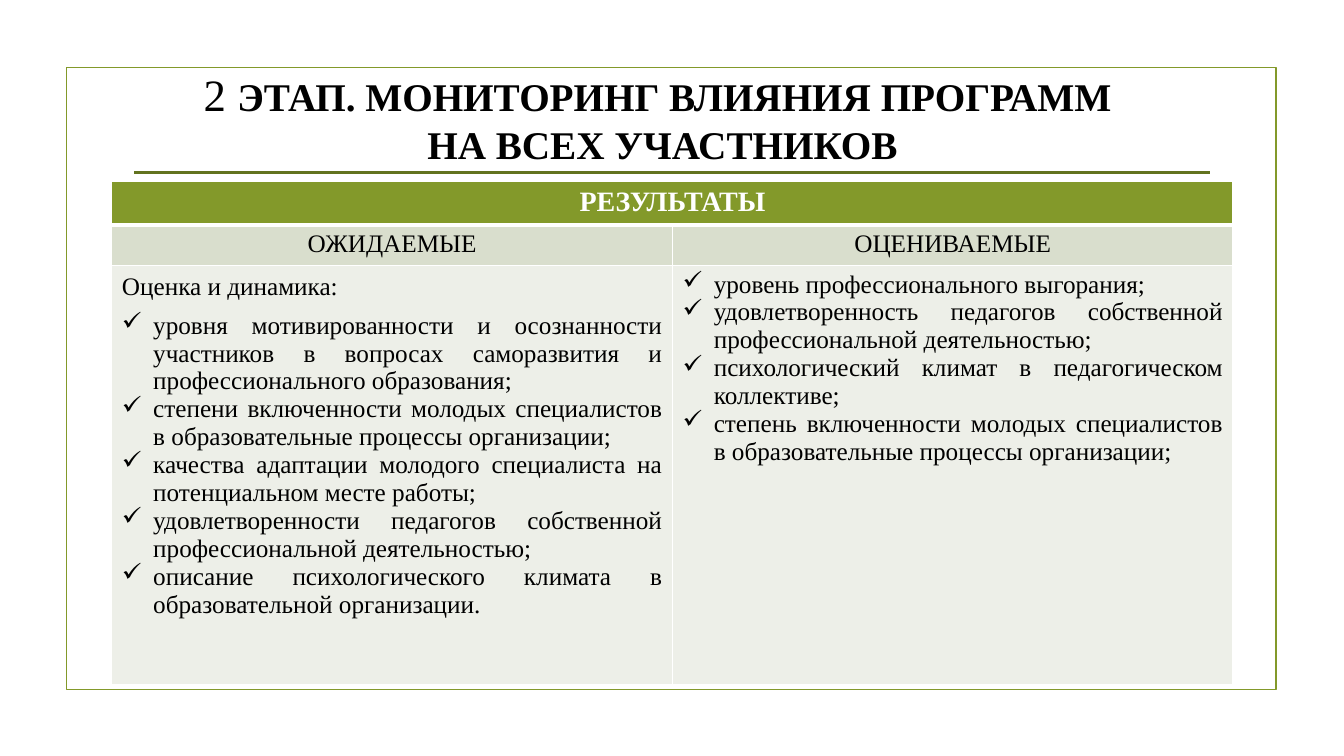
from lxml import etree
from pptx import Presentation
from pptx.dml.color import RGBColor
from pptx.enum.shapes import MSO_CONNECTOR, MSO_SHAPE
from pptx.enum.text import MSO_ANCHOR, PP_ALIGN
from pptx.oxml.ns import qn
from pptx.util import Emu, Pt

PX = 9144  # 100 px to the inch
FONT = "Times New Roman"
CENTER, JUSTIFY = PP_ALIGN.CENTER, PP_ALIGN.JUSTIFY
BOTTOM = MSO_ANCHOR.BOTTOM
RECTANGLE, STRAIGHT = MSO_SHAPE.RECTANGLE, MSO_CONNECTOR.STRAIGHT

GREEN, DARK_GREEN = "83992A", "62731F"
SUBHEADER_FILL, BODY_FILL = "D9DECD", "EDEFE8"
BLACK, WHITE = "000000", "FFFFFF"
BULLET_INDENT = 31

INTRO = "Оценка и динамика:"
EXPECTED = [
    "уровня мотивированности и осознанности участников в вопросах саморазвития и профессионального образования;",
    "степени включенности молодых специалистов в образовательные процессы организации; ",
    "качества адаптации молодого специалиста на потенциальном месте работы;",
    "удовлетворенности педагогов собственной профессиональной деятельностью;",
    "описание психологического климата в образовательной организации. ",
]
ASSESSED = [
    "уровень профессионального выгорания;",
    "удовлетворенность педагогов собственной профессиональной деятельностью;",
    "психологический климат в педагогическом коллективе; ",
    "степень включенности молодых специалистов в образовательные процессы организации; ",
]


def px(*lengths):
    return [Emu(length * PX) for length in lengths]


def color(value):
    return RGBColor.from_string(value)


def add_run(paragraph, text, size, bold=False, text_color=BLACK):
    run = paragraph.add_run()
    run.text = text
    run.font.name = FONT
    run.font.size = Pt(size)
    run.font.bold = bold
    run.font.color.rgb = color(text_color)


def add_frame(slide):
    frame = slide.shapes.add_shape(RECTANGLE, *px(66, 67, 1200, 617))
    frame.shadow.inherit = False
    frame.fill.background()
    frame.line.color.rgb = color(GREEN)
    frame.line.width = Pt(1.25)


def add_title(slide):
    text_frame = slide.shapes.add_textbox(*px(30, 60, 1254, 111)).text_frame
    text_frame.word_wrap = True
    text_frame.vertical_anchor = BOTTOM
    first = text_frame.paragraphs[0]
    add_run(first, "2 ", 32)
    add_run(first, "ЭТАП. МОНИТОРИНГ ВЛИЯНИЯ ПРОГРАММ ", 28, bold=True)
    second = text_frame.add_paragraph()
    add_run(second, "НА ВСЕХ УЧАСТНИКОВ", 28, bold=True)
    for paragraph in text_frame.paragraphs:
        paragraph.alignment = CENTER


def add_rule(slide):
    rule = slide.shapes.add_connector(STRAIGHT, *px(133, 171, 1200, 171))
    rule.line.color.rgb = color(DARK_GREEN)
    rule.line.width = Pt(2.25)
    etree.SubElement(rule._element.spPr, qn("a:effectLst"))


def style_cell(cell, fill, bottom=1, top=1):
    properties = cell._tc.get_or_add_tcPr()
    for side, width in (("L", 1), ("R", 1), ("T", top), ("B", bottom)):
        border = etree.SubElement(properties, qn(f"a:ln{side}"), w=str(Pt(width)))
        solid = etree.SubElement(border, qn("a:solidFill"))
        etree.SubElement(solid, qn("a:srgbClr"), val=WHITE)
    cell.fill.solid()
    cell.fill.fore_color.rgb = color(fill)


def fill_heading(cell, text, size, bold=False, text_color=BLACK):
    paragraph = cell.text_frame.paragraphs[0]
    paragraph.alignment = CENTER
    add_run(paragraph, text, size, bold, text_color)


def fill_list(cell, items, intro=None):
    text_frame = cell.text_frame
    paragraph = text_frame.paragraphs[0]
    if intro:
        paragraph.alignment = JUSTIFY
        paragraph.line_spacing = 1.07
        paragraph.space_after = Pt(8)
        add_run(paragraph, intro, 18)
        paragraph = text_frame.add_paragraph()
    for index, item in enumerate(items):
        if index:
            paragraph = text_frame.add_paragraph()
        paragraph.alignment = JUSTIFY
        properties = paragraph._p.get_or_add_pPr()
        properties.set("marL", str(BULLET_INDENT * PX))
        properties.set("indent", str(-BULLET_INDENT * PX))
        etree.SubElement(properties, qn("a:buChar"), char="✓")
        add_run(paragraph, item, 18)


def add_results_table(slide):
    table = slide.shapes.add_table(3, 2, *px(111, 180, 1112, 497)).table
    table.horz_banding = False
    for column in table.columns:
        column.width = Emu(556 * PX)
    for row, height in zip(table.rows, px(42, 39, 416)):
        row.height = height

    # Header across both columns
    for column in range(2):
        style_cell(table.cell(0, column), GREEN, bottom=3)
        style_cell(table.cell(1, column), SUBHEADER_FILL, top=3)
        style_cell(table.cell(2, column), BODY_FILL)
    table.cell(0, 0).merge(table.cell(0, 1))
    fill_heading(table.cell(0, 0), "РЕЗУЛЬТАТЫ", 20, True, WHITE)

    # Column headings and lists
    fill_heading(table.cell(1, 0), "ОЖИДАЕМЫЕ", 18)
    fill_heading(table.cell(1, 1), "ОЦЕНИВАЕМЫЕ", 18)
    fill_list(table.cell(2, 0), EXPECTED, INTRO)
    fill_list(table.cell(2, 1), ASSESSED)


def main():
    presentation = Presentation()
    presentation.slide_width, presentation.slide_height = px(1333, 750)
    slide = presentation.slides.add_slide(presentation.slide_layouts[6])
    add_frame(slide)
    add_title(slide)
    add_rule(slide)
    add_results_table(slide)
    presentation.save("out.pptx")


if __name__ == "__main__":
    main()
